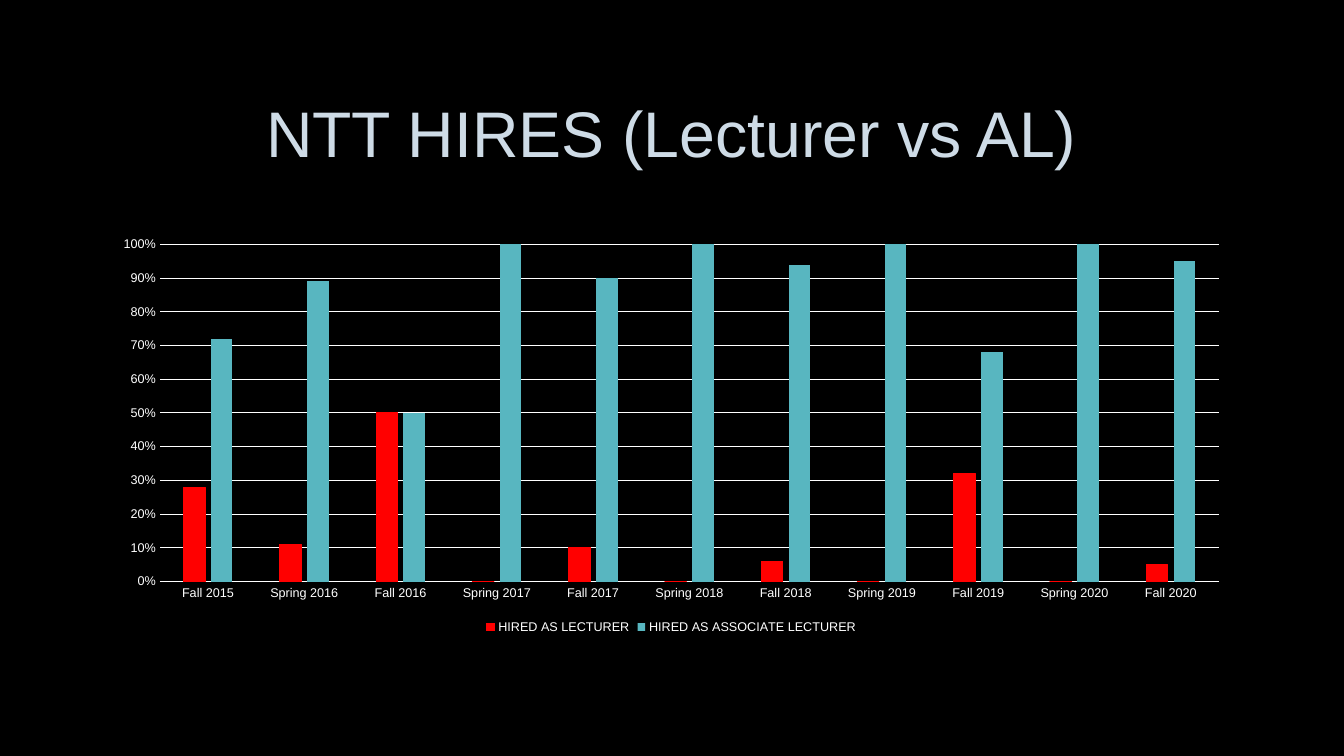
"""Build the slide comparing lecturer and associate lecturer hires by term."""
from pptx import Presentation
from pptx.chart.data import CategoryChartData
from pptx.dml.color import RGBColor
from pptx.enum.chart import XL_CHART_TYPE, XL_LEGEND_POSITION, XL_TICK_MARK
from pptx.enum.text import MSO_ANCHOR, MSO_AUTO_SIZE, PP_ALIGN
from pptx.util import Pt

TITLE = "NTT HIRES (Lecturer vs AL)"
FONT = "Arial"
COLORS = {
    "background": "000000",
    "title": "CEDBE6",
    "text": "FFFFFF",
    "lecturer": "FF0000",
    "associate": "58B6C0",
}
TERMS = [
    "Fall 2015", "Spring 2016", "Fall 2016", "Spring 2017", "Fall 2017", "Spring 2018",
    "Fall 2018", "Spring 2019", "Fall 2019", "Spring 2020", "Fall 2020",
]
HIRES = [
    ("HIRED AS LECTURER", "lecturer",
     [0.28, 0.11, 0.5, 0, 0.1, 0, 0.06, 0, 0.32, 0, 0.05]),
    ("HIRED AS ASSOCIATE LECTURER", "associate",
     [0.72, 0.89, 0.5, 1, 0.9, 1, 0.94, 1, 0.68, 1, 0.95]),
]
SLIDE_WIDTH, SLIDE_HEIGHT = 960, 540
LEFT, WIDTH = 72, 815
TITLE_TOP, TITLE_HEIGHT = 48, 99.5
CHART_TOP, CHART_HEIGHT = 163.5, 292.5


def color(name):
    return RGBColor.from_string(COLORS[name])


def style_font(font, size, color_name):
    font.name = FONT
    font.size = Pt(size)
    font.color.rgb = color(color_name)


def style_line(line, color_name):
    line.color.rgb = color(color_name)
    line.width = Pt(0.75)


def add_title(slide):
    title = slide.shapes.title
    title.left, title.top = Pt(LEFT), Pt(TITLE_TOP)
    title.width, title.height = Pt(WIDTH), Pt(TITLE_HEIGHT)
    frame = title.text_frame
    frame.word_wrap = True
    frame.auto_size = MSO_AUTO_SIZE.NONE
    frame.vertical_anchor = MSO_ANCHOR.MIDDLE
    paragraph = frame.paragraphs[0]
    paragraph.alignment = PP_ALIGN.CENTER
    paragraph.line_spacing = 0.9
    run = paragraph.add_run()
    run.text = TITLE
    style_font(run.font, 46, "title")


def add_hires_chart(slide):
    data = CategoryChartData(number_format="0%")
    data.categories = TERMS
    for name, _, shares in HIRES:
        data.add_series(name, shares)
    chart = slide.shapes.add_chart(
        XL_CHART_TYPE.COLUMN_CLUSTERED,
        Pt(LEFT), Pt(CHART_TOP), Pt(WIDTH), Pt(CHART_HEIGHT), data,
    ).chart
    chart.has_title = False
    style_font(chart.font, 10, "text")

    plot = chart.plots[0]
    plot.gap_width = 219
    plot.overlap = -27
    plot.vary_by_categories = False
    for series, (_, color_name, _) in zip(plot.series, HIRES):
        series.format.fill.solid()
        series.format.fill.fore_color.rgb = color(color_name)
        series.invert_if_negative = False
    style_line(plot.series[0].format.line, "lecturer")

    for axis in (chart.category_axis, chart.value_axis):
        axis.major_tick_mark = XL_TICK_MARK.NONE
        axis.minor_tick_mark = XL_TICK_MARK.NONE
        style_font(axis.tick_labels.font, 9, "text")
    style_line(chart.category_axis.format.line, "text")

    share_axis = chart.value_axis
    share_axis.minimum_scale = 0
    share_axis.maximum_scale = 1
    share_axis.major_unit = 0.1
    share_axis.tick_labels.number_format = "0%"
    share_axis.tick_labels.number_format_is_linked = False
    share_axis.format.line.fill.background()
    style_line(share_axis.major_gridlines.format.line, "text")

    chart.has_legend = True
    chart.legend.position = XL_LEGEND_POSITION.BOTTOM
    chart.legend.include_in_layout = False
    style_font(chart.legend.font, 9, "text")


def main():
    presentation = Presentation()
    presentation.slide_width = Pt(SLIDE_WIDTH)
    presentation.slide_height = Pt(SLIDE_HEIGHT)
    slide = presentation.slides.add_slide(presentation.slide_layouts.get_by_name("Title Only"))
    slide.background.fill.solid()
    slide.background.fill.fore_color.rgb = color("background")
    add_title(slide)
    add_hires_chart(slide)
    presentation.save("out.pptx")


if __name__ == "__main__":
    main()
